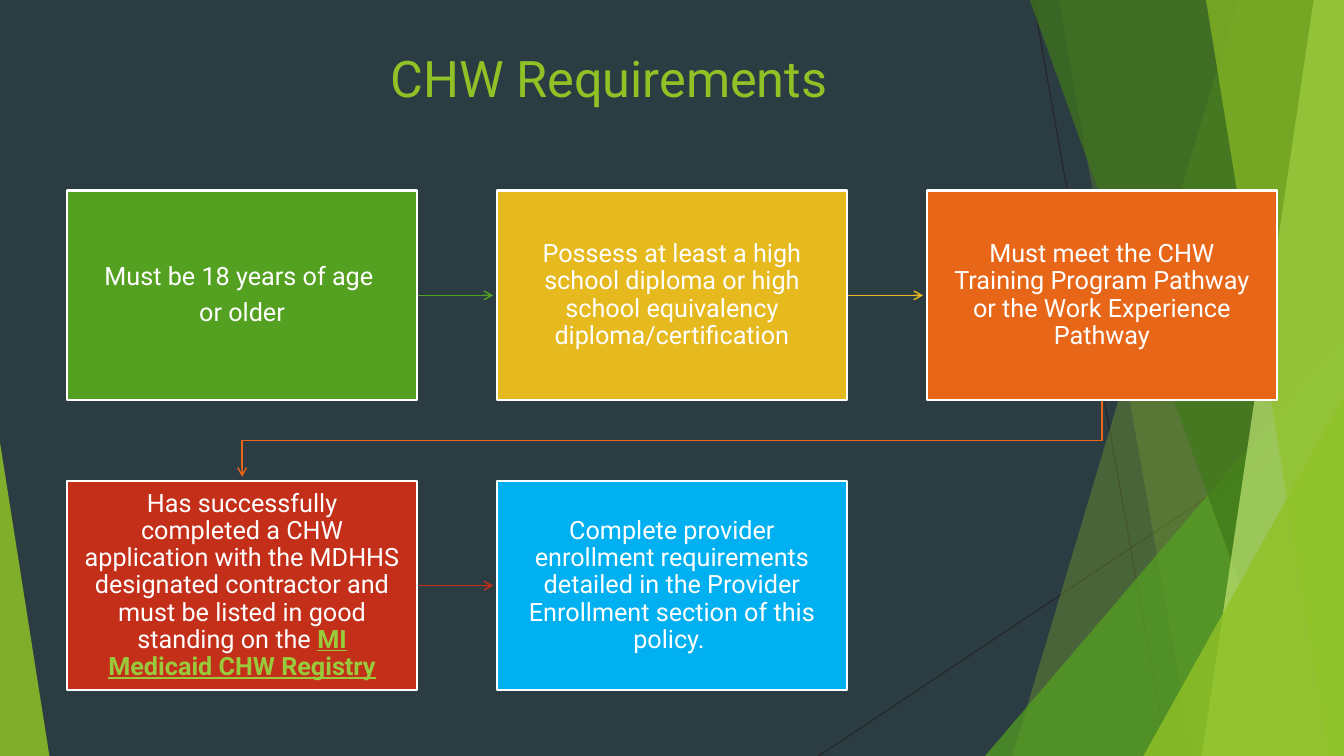
import pptx
import pptx.util
import pptx.dml.color
import pptx.enum.shapes
import pptx.enum.text
import pptx.oxml
import pptx.oxml.ns
from lxml import etree

Inches = pptx.util.Inches
Kind = pptx.enum.shapes.MSO_SHAPE
Anchor = pptx.enum.text.MSO_ANCHOR
Align = pptx.enum.text.PP_ALIGN

THEME = {
    "font": "Roboto", "head": 36, "body": 18,
    "back": "2C3C43", "white": "FFFFFF", "dark": "262626",
    "lime": "90C226", "pale": "C0E474", "leaf": "54A021", "moss": "3F7819",
    "link": "99CA3C", "gold": "E6B91E", "flame": "E76618",
    "red": "C42F1A", "blue": "00B0F0",
}

TITLE = "CHW Requirements"
STEPS = [
    ("leaf", [["Must be 18 years of age "], ["or older"]]),
    ("gold", [["Possess at least a high school diploma or high school "
               "equivalency diploma/certification"]]),
    ("flame", [["Must meet the CHW Training Program Pathway or the Work "
                "Experience Pathway"]]),
    ("red", [["Has successfully completed a CHW application with the MDHHS "
              "designated contractor and must be listed in good standing on the ",
              ("MI Medicaid CHW Registry",
               {"color": "link", "bold": True, "under": True})]]),
    ("blue", [["Complete provider enrollment requirements detailed in the "
               "Provider Enrollment section of this policy. "]]),
]

RAYS = [((10.25, 0), (11.58, 7.5)), ((13.33, 4.03), (8.12, 7.5))]
SHARDS = [
    ("poly", (12.28, 13.33, 13.33, 10.04), "lime", 30),
    ("poly", (10.5, 13.33, 13.33, 11.83), "lime", 20),
    ("tri", (9.77, 3.33, 3.56, 4.17, 1), "leaf", 72),
    ("poly", (10.21, 13.33, 13.33, 12.91), "moss", 70),
    ("poly", (13.03, 13.33, 13.33, 11.92), "pale", 70),
    ("poly", (11.96, 13.33, 13.33, 13.18), "lime", 65),
    ("tri", (11.34, 3.93, 1.99, 3.57, 1), "lime", 80),
    ("tri", (0, 4.39, 0.49, 3.11, 0), "lime", 85),
]

PAGE = 13.33
COLS, TOP, HIGH, STEP_Y = 3, 1.89, 2.08, 2.88
WIDE = HIGH / 0.6
STEP_X = WIDE * 1.23
LEFT = (PAGE - (COLS - 1) * STEP_X - WIDE) / 2
GAP = 0.04

deck = pptx.Presentation()
deck.slide_width, deck.slide_height = Inches(PAGE), Inches(7.5)
slide = deck.slides.add_slide(deck.slide_layouts[5])
shapes = slide.shapes


def rgb(name):
    return pptx.dml.color.RGBColor.from_string(THEME[name])


def paint(fill, name, alpha=100):
    fill.solid()
    fill.fore_color.rgb = rgb(name)
    if alpha < 100:
        tint = fill._xPr.find(".//" + pptx.oxml.ns.qn("a:srgbClr"))
        etree.SubElement(tint, pptx.oxml.ns.qn("a:alpha"), val=str(alpha * 1000))


def stroke(line, name, size, arrow=False):
    paint(line.fill, name)
    line.width = pptx.util.Pt(size)
    if arrow:
        etree.SubElement(line._get_or_add_ln(), pptx.oxml.ns.qn("a:tailEnd"),
                         type="arrow")


def link(start, end, name, size, arrow=False):
    line = shapes.add_connector(pptx.enum.shapes.MSO_CONNECTOR.STRAIGHT,
                                *map(Inches, start + end))
    stroke(line.line, name, size, arrow)
    etree.SubElement(line._element.spPr, pptx.oxml.ns.qn("a:effectLst"))


def trace(points, close):
    spots = [(Inches(x), Inches(y)) for x, y in points]
    pen = shapes.build_freeform(*spots[0])
    pen.add_line_segments(spots[1:], close=close)
    shape = pen.convert_to_shape()
    shape.shadow.inherit = False
    return shape


def write(frame, paras, size="body", color="white", inset=(0.17, 0.18),
          anchor=Anchor.MIDDLE, lead=0.9, after=6.3):
    frame.word_wrap = True
    frame.auto_size = pptx.enum.text.MSO_AUTO_SIZE.NONE
    frame.vertical_anchor = anchor
    frame.margin_left = frame.margin_right = Inches(inset[0])
    frame.margin_top = frame.margin_bottom = Inches(inset[1])
    for i, runs in enumerate(paras):
        para = frame.add_paragraph() if i else frame.paragraphs[0]
        para.alignment = Align.CENTER
        para.line_spacing = lead
        para.space_before = pptx.util.Pt(0)
        para.space_after = pptx.util.Pt(after)
        for item in runs:
            text, look = (item, {}) if isinstance(item, str) else item
            run = para.add_run()
            run.text = text
            font = run.font
            font.name = THEME["font"]
            font.size = pptx.util.Pt(THEME[size])
            font.color.rgb = rgb(look.get("color", color))
            font.bold = look.get("bold", False)
            font.underline = look.get("under", False)


def scene():
    paint(slide.background.fill, "back")
    for start, end in RAYS:
        link(start, end, "dark", 0.75)
    for kind, spot, name, alpha in SHARDS:
        if kind == "tri":
            shape = shapes.add_shape(Kind.ISOSCELES_TRIANGLE,
                                     *map(Inches, spot[:4]))
            shape.adjustments[0] = spot[4]
            shape.shadow.inherit = False
        else:
            shape = trace(list(zip(spot, (-0.01, -0.01, 7.5, 7.5))), True)
        paint(shape.fill, name, alpha)
        shape.line.fill.background()


def head():
    title = shapes.title
    title.left, title.top, title.width, title.height = map(
        Inches, (0.76, 0.42, 10.56, 0.91))
    write(title.text_frame, [[TITLE]], size="head", color="lime",
          inset=(0.1, 0.05), anchor=Anchor.TOP, lead=1, after=0)


def place(i):
    row, col = divmod(i, COLS)
    return LEFT + col * STEP_X, TOP + row * STEP_Y


def join(i, name):
    x, y = place(i)
    tox, toy = place(i + 1)
    if y == toy:
        mid = y + HIGH / 2
        link((x + WIDE, mid), (tox - GAP, mid), name, 1, True)
        return
    start, end = x + WIDE / 2, tox + WIDE / 2
    turn = (y + HIGH + toy) / 2
    bend = trace([(start, y + HIGH), (start, turn), (end, turn),
                  (end, toy - GAP)], False)
    bend.fill.background()
    stroke(bend.line, name, 1, True)


def flow():
    for i, (name, paras) in enumerate(STEPS):
        if i + 1 < len(STEPS):
            join(i, name)
        box = shapes.add_shape(Kind.RECTANGLE,
                               *map(Inches, place(i) + (WIDE, HIGH)))
        box.shadow.inherit = False
        paint(box.fill, name)
        stroke(box.line, "white", 1.5)
        write(box.text_frame, paras)


if __name__ == "__main__":
    scene()
    head()
    flow()
    deck.save("out.pptx")
